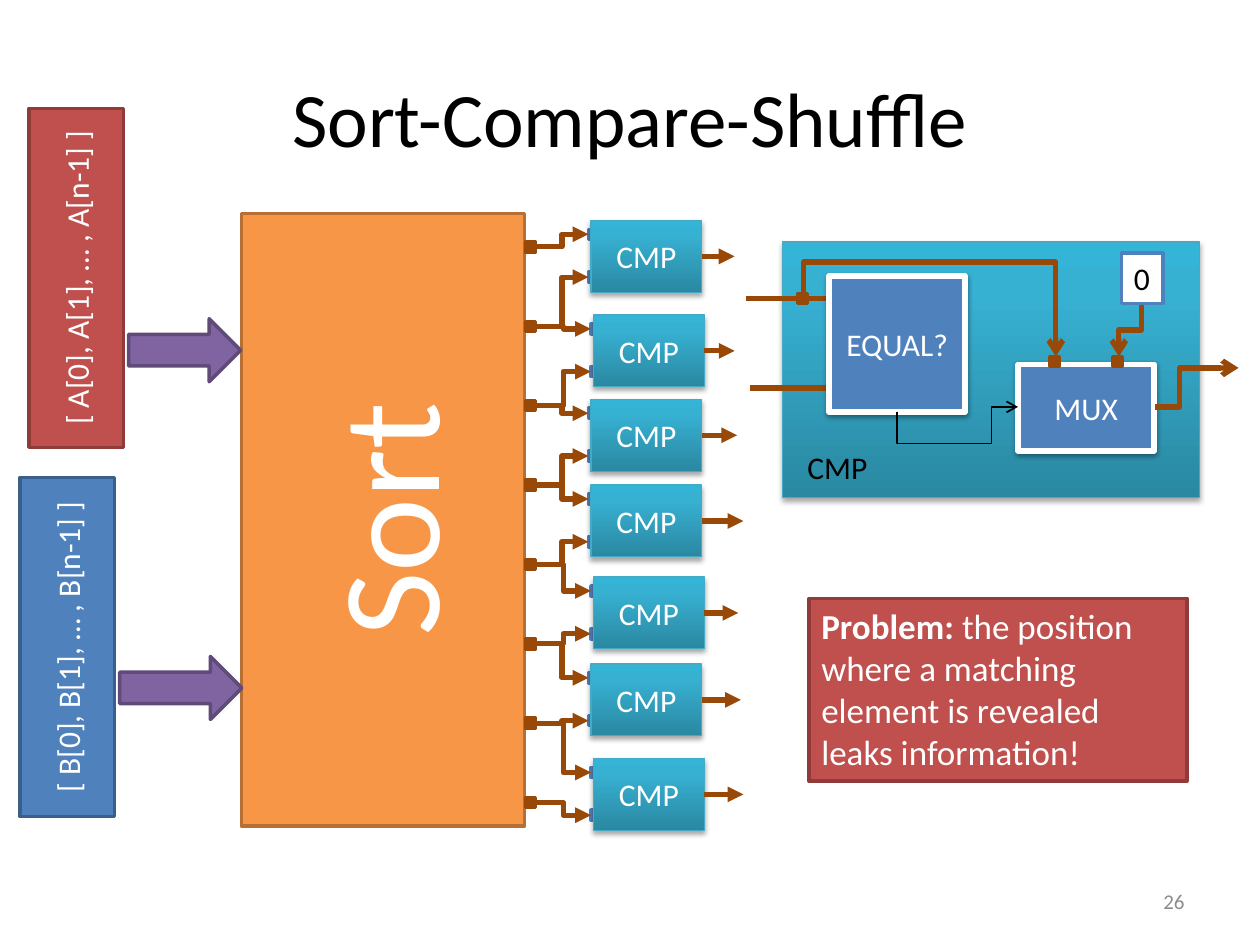
import pptx
import pptx.util
import pptx.dml.color
import pptx.enum.shapes
import pptx.enum.text
import pptx.oxml
import pptx.oxml.ns
from lxml import etree

Inches = pptx.util.Inches
Pt = pptx.util.Pt
RGBColor = pptx.dml.color.RGBColor
Shape = pptx.enum.shapes.MSO_SHAPE
Connector = pptx.enum.shapes.MSO_CONNECTOR
Align = pptx.enum.text.PP_ALIGN
Anchor = pptx.enum.text.MSO_ANCHOR
qn = pptx.oxml.ns.qn

WHITE = RGBColor(0xFF, 0xFF, 0xFF)
BLACK = RGBColor(0, 0, 0)
GREY = RGBColor(0x8C, 0x8C, 0x8C)
BLUE = RGBColor(0x4F, 0x81, 0xBD)
DARK_BLUE = RGBColor(0x3A, 0x5F, 0x8C)
SKY = RGBColor(0x00, 0xB0, 0xF0)
RED = RGBColor(0xC0, 0x50, 0x4D)
DARK_RED = RGBColor(0x8E, 0x3B, 0x39)
ORANGE = RGBColor(0xF7, 0x96, 0x46)
DARK_ORANGE = RGBColor(0xB7, 0x6F, 0x34)
PURPLE = RGBColor(0x80, 0x64, 0xA2)
DARK_PURPLE = RGBColor(0x5F, 0x4A, 0x78)
BROWN = RGBColor(0x98, 0x48, 0x07)
TEAL_EDGE = RGBColor(0x46, 0xAA, 0xC5)
TEAL_STOPS = ((0, RGBColor(0x2A, 0x88, 0xA2)),
              (80, RGBColor(0x37, 0xB1, 0xD2)),
              (100, RGBColor(0x34, 0xB4, 0xD6)))
PIN = 0.08


class Diagram:
    font = "Calibri"

    def __init__(self, slide):
        self.slide = slide

    def add_runs(self, frame, runs, size, color, align=Align.CENTER,
                 anchor=Anchor.MIDDLE, wrap=True):
        """Fill the first paragraph with (text, bold) runs."""
        frame.word_wrap = wrap
        frame.vertical_anchor = anchor
        paragraph = frame.paragraphs[0]
        paragraph.alignment = align
        for text, bold in runs:
            run = paragraph.add_run()
            run.text = text
            run.font.name = self.font
            run.font.size = Pt(size)
            run.font.bold = bold
            run.font.color.rgb = color

    def title(self, text, at):
        heading = self.slide.shapes.title
        heading.left, heading.top, heading.width, heading.height = map(Inches, at)
        self.add_runs(heading.text_frame, [(text, False)], 44, BLACK)

    def label(self, text, at, size=18, color=BLACK, **layout):
        holder = self.slide.shapes.add_textbox(*map(Inches, at))
        self.add_runs(holder.text_frame, [(text, False)], size, color, **layout)

    def block(self, at, fill, edge, edge_width=2, kind=Shape.RECTANGLE,
              rotation=0, runs=(), size=18, color=WHITE, **layout):
        shape = self.slide.shapes.add_shape(kind, *map(Inches, at))
        shape.rotation = rotation
        shape.shadow.inherit = False
        shape.fill.solid()
        shape.fill.fore_color.rgb = fill
        shape.line.color.rgb = edge
        shape.line.width = Pt(edge_width)
        if runs:
            self.add_runs(shape.text_frame, runs, size, color, **layout)
        return shape

    def raised(self, at, fill, edge, edge_width, opacity, distance, text=None):
        """Block with a soft shadow below it."""
        shape = self.block(at, fill, edge, edge_width,
                           runs=[(text, False)] if text else ())
        effects = shape._element.spPr.find(qn("a:effectLst"))
        shadow = etree.SubElement(
            effects, qn("a:outerShdw"), blurRad=str(Pt(3.1)),
            dist=str(Pt(distance)), dir="5400000", rotWithShape="0")
        tint = etree.SubElement(shadow, qn("a:srgbClr"), val=str(BLACK))
        etree.SubElement(tint, qn("a:alpha"), val=str(opacity * 1000))
        return shape

    def teal(self, at, text=None):
        shape = self.raised(at, TEAL_STOPS[0][1], TEAL_EDGE, 0.75, 35, 1.8, text)
        shape.fill.gradient()
        gradient = shape._element.spPr.find(qn("a:gradFill"))
        stops = gradient.find(qn("a:gsLst"))
        for old in list(stops):
            stops.remove(old)
        for percent, color in TEAL_STOPS:
            stop = etree.SubElement(stops, qn("a:gs"), pos=str(percent * 1000))
            etree.SubElement(stop, qn("a:srgbClr"), val=str(color))
        shape.fill.gradient_angle = 90

    def gate(self, at, text):
        self.raised(at, BLUE, WHITE, 3, 38, 1.6, text)

    def pin(self, x, y, fill=BROWN, edge=BROWN):
        self.block((x, y, PIN, PIN), fill, edge)

    def wire(self, start, end, head=None, bends=None, vertical=False,
             color=BROWN, width=3):
        """Line from start to end; bends are the elbow positions as fractions.

        A vertical wire leaves its start up or down: it is laid out sideways
        around its centre and turned by 90 degrees.
        """
        (x1, y1), (x2, y2) = start, end
        if vertical:
            cx, cy, dx, dy = (x1 + x2) / 2, (y1 + y2) / 2, x2 - x1, y2 - y1
            x1, y1, x2, y2 = cx - dy / 2, cy + dx / 2, cx + dy / 2, cy - dx / 2
        kind = Connector.ELBOW if bends else Connector.STRAIGHT
        line = self.slide.shapes.add_connector(kind, *map(Inches, (x1, y1, x2, y2)))
        line.line.color.rgb = color
        line.line.width = Pt(width)
        properties = line._element.spPr
        if vertical:
            properties.find(qn("a:xfrm")).set("rot", "5400000")
        if bends:
            geometry = properties.find(qn("a:prstGeom"))
            geometry.set("prst", f"bentConnector{len(bends) + 2}")
            guides = geometry.find(qn("a:avLst"))
            for number, bend in enumerate(bends, 1):
                etree.SubElement(guides, qn("a:gd"), name=f"adj{number}",
                                 fmla=f"val {round(bend * 100000)}")
        if head:
            etree.SubElement(properties.find(qn("a:ln")), qn("a:tailEnd"), type=head)
        etree.SubElement(properties, qn("a:effectLst"))


def draw_inputs_and_sorter(d):
    d.block((0.61, 3, 4.86, 2.25), ORANGE, DARK_ORANGE, rotation=270,
            runs=[("Sort", False)], size=80)
    for name, at, fill, edge in (("A", (-0.74, 1.83, 2.69, 0.75), RED, DARK_RED),
                                 ("B", (-0.81, 4.76, 2.69, 0.75), BLUE, DARK_BLUE)):
        d.block(at, fill, edge, rotation=270,
                runs=[(f"[ {name}[0], {name}[1], … , {name}[n-1] ]", False)])
    for at in ((1.02, 2.53, 0.89, 0.5), (0.95, 5.21, 0.97, 0.5)):
        d.block(at, PURPLE, DARK_PURPLE, kind=Shape.RIGHT_ARROW)


def draw_comparators(d):
    # left, top and the x where the output arrow ends
    comparators = ((4.69, 1.75, 5.83), (4.71, 2.5, 5.83), (4.69, 3.17, 5.85),
                   (4.69, 3.85, 5.9), (4.71, 4.58, 5.86), (4.69, 5.27, 5.88),
                   (4.71, 6.02, 5.9))
    width, height = 0.88, 0.57
    ports = [(left - 0.02, top + drop)
             for left, top, _ in comparators for drop in (0.07, 0.41)]
    taps = [(4.17, 1.92 + 0.63 * row) for row in range(8)]
    for x, y in ports:
        d.pin(x, y, SKY, BLUE)
    for left, top, _ in comparators:
        d.teal((left, top, width, height), "CMP")
    for x, y in taps:
        d.pin(x, y)
    # Neighbouring comparators share the tap between them
    for number, (x, y) in enumerate(ports):
        tap_x, tap_y = taps[(number + 1) // 2]
        d.wire((tap_x + PIN, tap_y + PIN / 2), (x, y + PIN / 2), "triangle", [0.5])
    for left, top, tip in comparators:
        middle = top + height / 2
        d.wire((left + width, middle), (tip, middle), "triangle", [0.5])


def draw_comparator_detail(d):
    d.teal((6.21, 1.92, 3.31, 2.03))
    d.wire((5.92, 2.37), (6.6, 2.37))
    d.wire((5.95, 3.08), (6.63, 3.08))
    d.gate((6.58, 2.19, 1.08, 1.08), "EQUAL?")
    d.gate((8.08, 2.89, 1.08, 0.69), "MUX")
    d.wire((6.38, 2.33), (8.38, 2.83), "arrow", [-0.5], vertical=True)
    d.wire((7.12, 3.27), (8.08, 3.23), "arrow", [-6.25, 0.78], vertical=True,
           color=BLACK, width=1)
    d.wire((9.06, 2.41), (8.88, 2.83), "arrow", [0.5], vertical=True)
    for x, y in ((6.33, 2.33), (8.33, 2.83), (8.83, 2.83)):
        d.pin(x, y)
    d.block((8.9, 2.01, 0.33, 0.4), WHITE, BLUE, runs=[("0", False)], color=BLACK,
            align=Align.LEFT, anchor=Anchor.TOP, wrap=False)
    d.wire((9.17, 3.23), (9.83, 2.92), "arrow", [0.29])
    d.label("CMP", (6.31, 3.51, 0.68, 0.4), align=Align.LEFT,
            anchor=Anchor.TOP, wrap=False)


def main():
    deck = pptx.Presentation()
    deck.slide_width, deck.slide_height = Inches(10), Inches(7.5)
    d = Diagram(deck.slides.add_slide(deck.slide_layouts[5]))
    d.title("Sort-Compare-Shuffle", (0.5, 0.3, 9, 1.25))
    d.label("26", (7.17, 6.95, 2.33, 0.4), 12, GREY, align=Align.RIGHT)
    draw_inputs_and_sorter(d)
    draw_comparator_detail(d)
    draw_comparators(d)
    d.block((6.42, 4.75, 3, 1.45), RED, DARK_RED, size=20,
            runs=[("Problem:", True),
                  (" the position where a matching element is revealed "
                   "leaks information!", False)],
            align=Align.LEFT, anchor=Anchor.TOP)
    deck.save("out.pptx")


if __name__ == "__main__":
    main()
